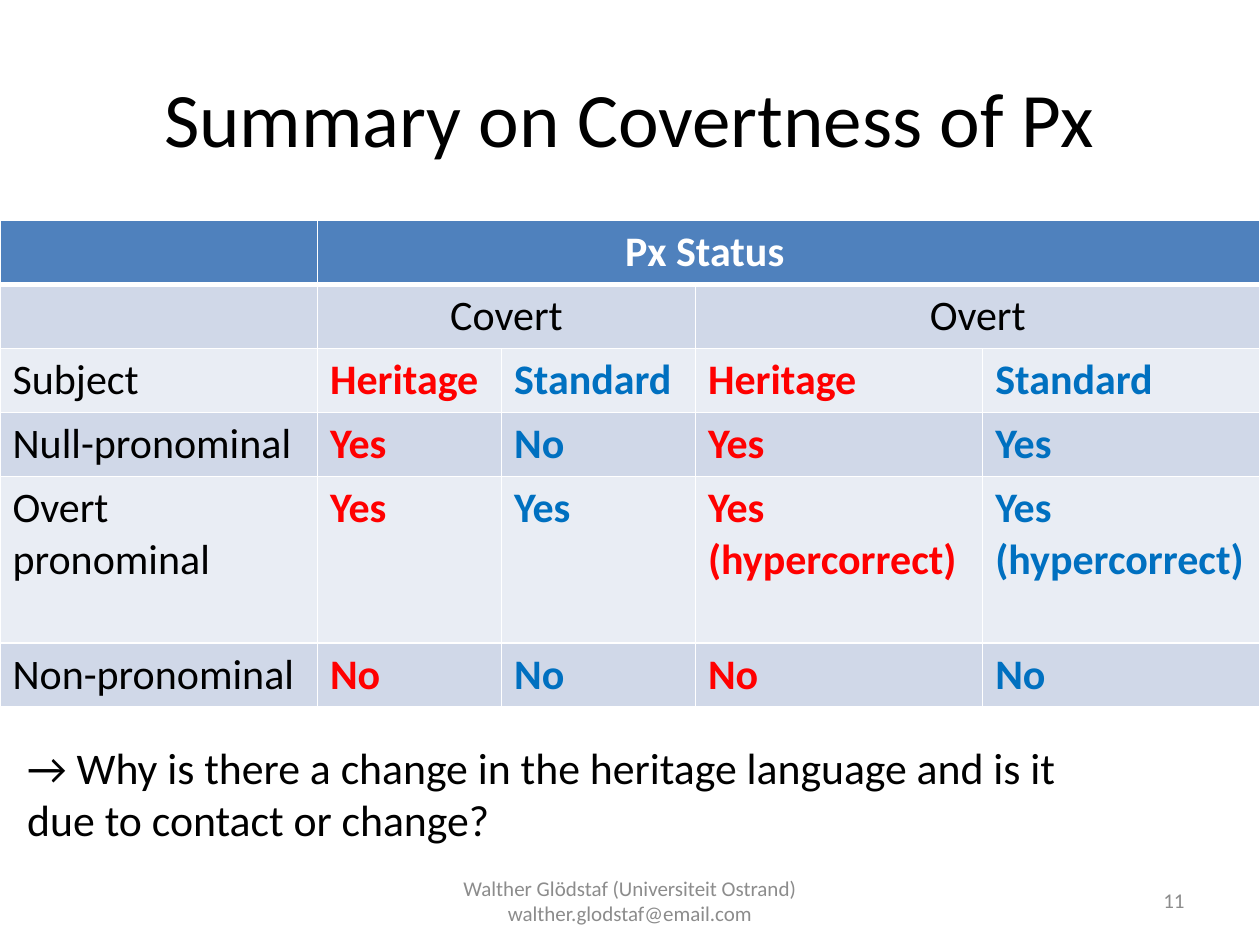
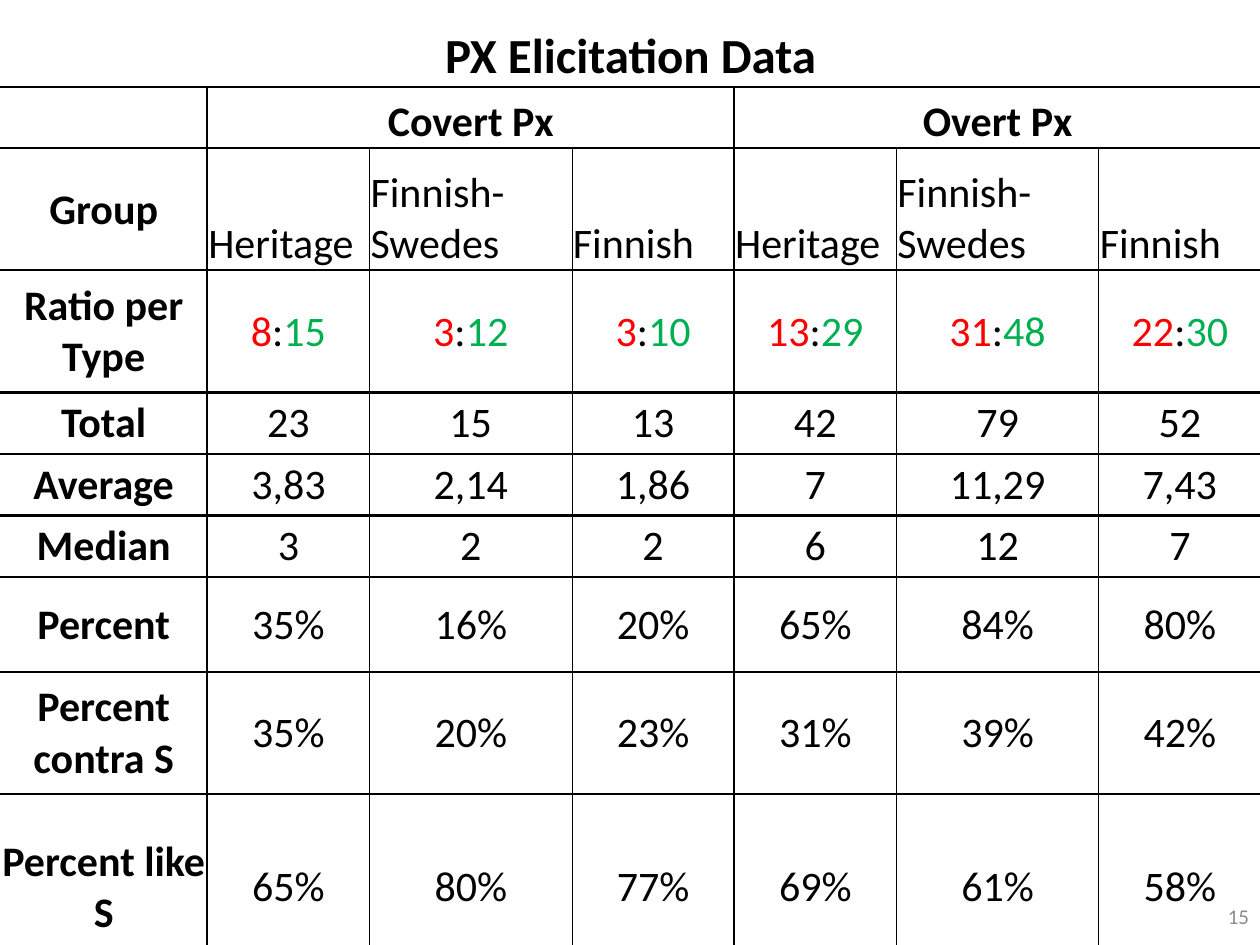
import pptx
import pptx.util
import pptx.dml.color
import pptx.enum.text
import pptx.oxml.ns
import lxml.etree

Cm = pptx.util.Cm
Pt = pptx.util.Pt
ALIGN = pptx.enum.text.PP_ALIGN
ANCHOR = pptx.enum.text.MSO_ANCHOR
FONT = "Calibri"
HUES = {
    "ink": "000000", "paper": "FFFFFF", "head": "4F81BD",
    "dark": "D0D8E8", "light": "E9EDF4", "red": "FF0000",
    "blue": "0070C0", "green": "00B050", "grey": "8C8C8C",
}

STATUS = [
    ["", "Px Status", "", "", ""],
    ["", "Covert", "", "Overt", ""],
    ["Subject", "Heritage", "Standard", "Heritage", "Standard"],
    ["Null-pronominal", "Yes", "No", "Yes", "Yes"],
    ["Overt pronominal", "Yes", "Yes", "Yes (hypercorrect)", "Yes (hypercorrect)"],
    ["Non-pronominal", "No", "No", "No", "No"],
]
GROUPS = ["Heritage", "Finnish-Swedes", "Finnish"]
COUNTS = [
    ["PX Elicitation Data"] + [""] * 6,
    ["", "Covert Px", "", "", "Overt Px", "", ""],
    ["Group"] + GROUPS * 2,
    ["Ratio per Type", "8:15", "3:12", "3:10", "13:29", "31:48", "22:30"],
    ["Total", "23", "15", "13", "42", "79", "52"],
    ["Average", "3,83", "2,14", "1,86", "7", "11,29", "7,43"],
    ["Median", "3", "2", "2", "6", "12", "7"],
    ["Percent", "35%", "16%", "20%", "65%", "84%", "80%"],
    ["Percent contra S", "35%", "20%", "23%", "31%", "39%", "42%"],
    ["Percent like S", "65%", "80%", "77%", "69%", "61%", "58%"],
]


def color(name):
    return pptx.dml.color.RGBColor.from_string(HUES[name])


def write(frame, runs, size, align=ALIGN.LEFT, bold=False):
    line = frame.paragraphs[0]
    line.alignment = align
    line.font.size = Pt(size)
    for words, hue in runs:
        run = line.add_run()
        run.text = words
        run.font.name = FONT
        run.font.size = Pt(size)
        run.font.bold = bold
        run.font.color.rgb = color(hue)


def label(slide, box, words, size, align=ALIGN.LEFT, hue="ink", anchor=ANCHOR.TOP):
    frame = slide.shapes.add_textbox(*map(Cm, box)).text_frame
    frame.word_wrap = True
    frame.vertical_anchor = anchor
    write(frame, [(words, hue)], size, align)


def footer(slide, box, words, align):
    label(slide, box, words, 12, align, "grey", ANCHOR.MIDDLE)


def border(cell, edges, hue):
    props = cell._tc.get_or_add_tcPr()
    kept = [side for side in "LRTB" if edges.get(side)]
    for spot, side in enumerate(kept):
        line = lxml.etree.Element(pptx.oxml.ns.qn("a:ln" + side), w=str(Pt(edges[side])))
        fill = lxml.etree.SubElement(line, pptx.oxml.ns.qn("a:solidFill"))
        lxml.etree.SubElement(fill, pptx.oxml.ns.qn("a:srgbClr"), val=HUES[hue])
        props.insert(spot, line)


def grid(slide, left, top, cols, rows, spans):
    box = map(Cm, (left, top, sum(cols), sum(rows)))
    table = slide.shapes.add_table(len(rows), len(cols), *box).table
    table.first_row = table.horz_banding = False
    for col, width in zip(table.columns, cols):
        col.width = Cm(width)
    for row, height in zip(table.rows, rows):
        row.height = Cm(height)
    for row, first, last in spans:
        table.cell(row, first).merge(table.cell(row, last))
    return table


def status(slide, left, top):
    cols = [6.4, 3.71, 3.91, 5.79, 5.59]
    rows = [1.29] * 4 + [3.35, 1.29]
    table = grid(slide, left, top, cols, rows, [(0, 1, 4), (1, 1, 2), (1, 3, 4)])
    for r, texts in enumerate(STATUS):
        for c, words in enumerate(texts):
            cell = table.cell(r, c)
            cell.fill.solid()
            band = "head" if r == 0 else "dark" if r % 2 else "light"
            cell.fill.fore_color.rgb = color(band)
            edges = dict.fromkeys("LRTB", 1)
            if r < 2:
                edges["B" if r == 0 else "T"] = 3
            border(cell, edges, "paper")
            hue = "ink"
            if r == 0:
                hue = "paper"
            elif r > 1 and c:
                hue = "red" if c % 2 else "blue"
            align = ALIGN.CENTER if r == 1 else ALIGN.LEFT
            write(cell.text_frame, [(words, hue)] if words else [], 24, align, hue != "ink")
    table.cell(0, 1).margin_left = Cm(6.2)


def counts(slide, left, top):
    cols = [4.18] + [3.27, 4.08, 3.27] * 2
    rows = [1.22, 1.24, 2.46, 2.46] + [1.24] * 3 + [1.91, 2.46, 3.76]
    table = grid(slide, left, top, cols, rows, [(0, 0, 6), (1, 1, 3), (1, 4, 6)])

    def rule(r, c):
        if r == 0 or c in (0, len(cols)):
            return 0
        if c % 3 == 1:
            return 1.5
        return 0.5 if r > 1 else 0

    for r, texts in enumerate(COUNTS):
        for c, words in enumerate(texts):
            cell = table.cell(r, c)
            cell.fill.background()
            cell.margin_left = cell.margin_right = cell.margin_top = Cm(0.02)
            cell.margin_bottom = 0
            low = r < 2 or (r == 2 and c)
            cell.vertical_anchor = ANCHOR.BOTTOM if low else ANCHOR.MIDDLE
            edges = {
                "L": rule(r, c), "R": rule(r, c + 1),
                "T": 1.5 if r else 0,
                "B": 1.5 if r < len(rows) - 1 else 0,
            }
            border(cell, edges, "ink")
            runs = [(words, "ink")] if words else []
            if ":" in words:
                part, whole = words.split(":")
                runs = [(part, "red"), (":", "ink"), (whole, "green")]
            align = ALIGN.LEFT if r == 2 and c else ALIGN.CENTER
            write(cell.text_frame, runs, 24 if r else 28, align, r < 2 or c == 0)


def title(slide, words):
    shape = slide.shapes.title
    shape.left, shape.top, shape.width, shape.height = map(Cm, (1.27, 0.76, 22.86, 3.18))
    shape.text_frame.vertical_anchor = ANCHOR.MIDDLE
    write(shape.text_frame, [(words, "ink")], 44, ALIGN.CENTER)


def summary(deck):
    slide = deck.slides.add_slide(deck.slide_layouts[5])
    title(slide, "Summary on Covertness of Px")
    status(slide, 0, 4.45)
    footer(slide, (8.68, 17.65, 8.04, 1.01),
           "Walther Glödstaf (Universiteit Ostrand) walther.glodstaf@email.com", ALIGN.CENTER)
    footer(slide, (18.2, 17.65, 5.93, 1.01), "11", ALIGN.RIGHT)
    label(slide, (0.3, 14.8, 22.4, 2.39),
          "→ Why is there a change in the heritage language and is it due to contact or change?", 25)


def data(deck):
    slide = deck.slides.add_slide(deck.slide_layouts[6])
    counts(slide, 0, 0.53)
    footer(slide, (19.5, 17.97, 5.93, 1.01), "15", ALIGN.RIGHT)


def main():
    deck = pptx.Presentation()
    deck.slide_width = Cm(25.4)
    deck.slide_height = Cm(19.05)
    summary(deck)
    data(deck)
    deck.save("out.pptx")


if __name__ == "__main__":
    main()
